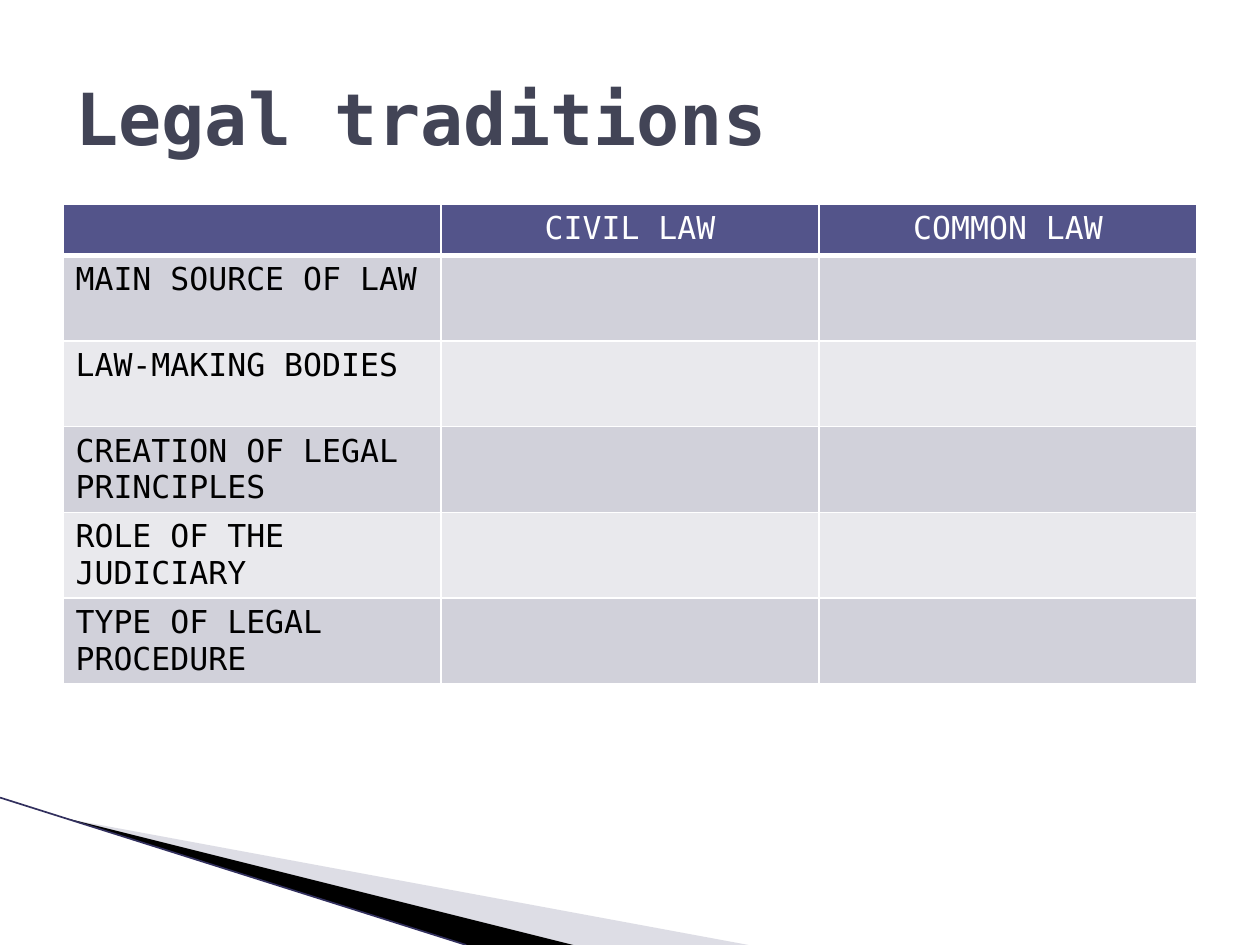
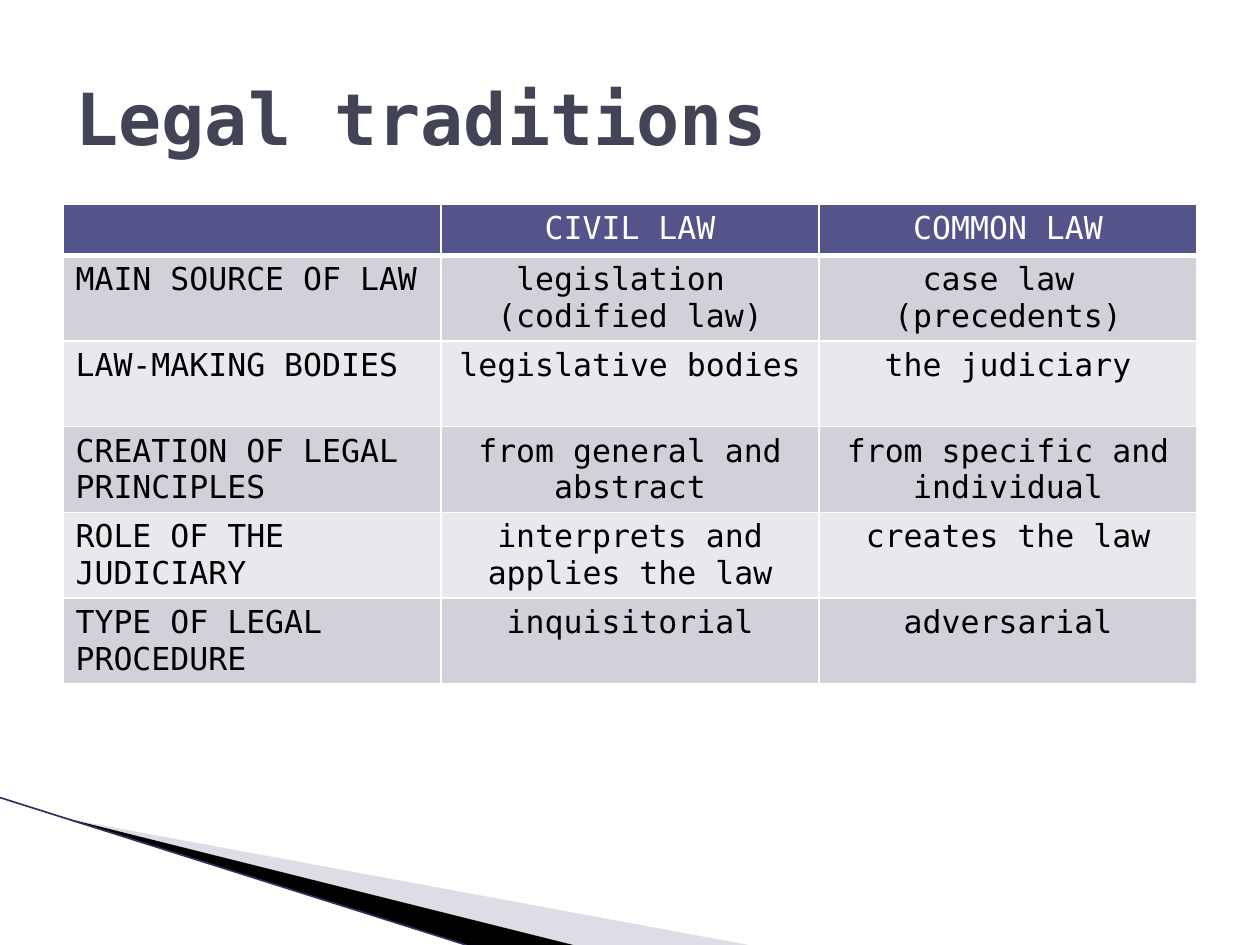
from dataclasses import dataclass

from lxml import etree
from pptx import Presentation, util as u
from pptx.dml.color import RGBColor
from pptx.enum import shapes, text
from pptx.oxml import ns


@dataclass(frozen=True)
class Theme:
    font: str = "DejaVu Sans Mono"
    title_size: float = 41
    table_size: float = 18
    title: str = "424456"
    header: str = "53548A"
    bands: tuple = ("D1D1DA", "E9E9ED")
    white: str = "FFFFFF"
    black: str = "000000"
    pale_wedge: str = "AAAABF"
    edge: str = "32305E"


THEME = Theme()
WIDTH, HEIGHT = u.Inches(10), u.Inches(7.5)
MARGIN = 0.05  # share of the slide width
COLUMNS = 3
HEADER_ROW, BODY_ROW = u.Inches(0.4), u.Inches(0.68)

TITLE = "Legal traditions"
HEADINGS = ["", "CIVIL LAW", "COMMON LAW"]
TOPICS = [
    "MAIN SOURCE OF LAW",
    "LAW-MAKING BODIES",
    "CREATION OF LEGAL PRINCIPLES",
    "ROLE OF THE JUDICIARY",
    "TYPE OF LEGAL PROCEDURE",
]
# The trailing spaces belong to the wording; a line break starts a paragraph
ANSWERS = [
    ("legislation \n(codified law)", "case law \n(precedents)"),
    ("legislative bodies", "the judiciary"),
    ("from general and abstract", "from specific and individual"),
    ("interprets and applies the law", "creates the law"),
    ("inquisitorial", "adversarial"),
]
NO_ANSWERS = [("", "")] * len(TOPICS)


def across(share):
    return u.Emu(round(WIDTH * share))


def down(share):
    return u.Emu(round(HEIGHT * share))


def set_fill(target, color):
    target.fill.solid()
    target.fill.fore_color.rgb = RGBColor.from_string(color)


def add_run(paragraph, words, size, color, bold=False):
    run = paragraph.add_run()
    run.text = words
    run.font.name = THEME.font
    run.font.size = u.Pt(size)
    run.font.bold = bold
    run.font.color.rgb = RGBColor.from_string(color)


# Decoration at the foot of the slide
def add_wedge(slide, points, color, opacity=None):
    corners = [(across(x), down(y)) for x, y in points]
    builder = slide.shapes.build_freeform(*corners[0])
    builder.add_line_segments(corners[1:], close=True)
    wedge = builder.convert_to_shape()
    wedge.shadow.inherit = False
    wedge.line.fill.background()
    set_fill(wedge, color)
    if opacity is not None:
        color_element = wedge.fill._xPr.find(".//" + ns.qn("a:srgbClr"))
        alpha = etree.SubElement(color_element, ns.qn("a:alpha"))
        alpha.set("val", str(opacity * 1000))


def add_corner(slide):
    add_wedge(slide, [(0.055, 0.867), (0.594, 1), (0.455, 1)],
              THEME.pale_wedge, opacity=40)
    add_wedge(slide, [(0.053, 0.866), (0.455, 1), (0.37, 1)], THEME.black)
    edge = slide.shapes.add_connector(
        shapes.MSO_CONNECTOR.STRAIGHT, 0, down(0.844), across(0.37), down(1))
    edge.line.color.rgb = RGBColor.from_string(THEME.edge)
    edge.line.width = u.Pt(0.95)
    etree.SubElement(edge._element.spPr, ns.qn("a:effectLst"))


def add_title(slide, words):
    box = slide.shapes.add_textbox(
        across(MARGIN), down(0.04), across(1 - 2 * MARGIN), down(1 / 6))
    frame = box.text_frame
    frame.word_wrap = True
    frame.vertical_anchor = text.MSO_ANCHOR.MIDDLE
    add_run(frame.paragraphs[0], words, THEME.title_size, THEME.title, bold=True)


# Comparison table
def set_borders(cell, bottom_points):
    properties = cell._tc.get_or_add_tcPr()
    for index, side in enumerate(("lnL", "lnR", "lnT", "lnB")):
        points = bottom_points if side == "lnB" else 1
        line = etree.Element(ns.qn("a:" + side), w=str(u.Pt(points)))
        solid = etree.SubElement(line, ns.qn("a:solidFill"))
        etree.SubElement(solid, ns.qn("a:srgbClr"), val=THEME.white)
        properties.insert(index, line)


def fill_cell(cell, words, fill, color, centred, bottom_points):
    set_fill(cell, fill)
    set_borders(cell, bottom_points)
    frame = cell.text_frame
    for index, line in enumerate(words.split("\n")):
        paragraph = frame.add_paragraph() if index else frame.paragraphs[0]
        if centred:
            paragraph.alignment = text.PP_ALIGN.CENTER
        if line:
            add_run(paragraph, line, THEME.table_size, color)
        else:
            paragraph.font.size = u.Pt(THEME.table_size)


def add_comparison(slide, answers):
    rows = [HEADINGS] + [[topic, *pair] for topic, pair in zip(TOPICS, answers)]
    table = slide.shapes.add_table(
        len(rows), COLUMNS, across(MARGIN), down(0.216), across(1 - 2 * MARGIN),
        HEADER_ROW + BODY_ROW * len(TOPICS)).table
    for row_index, row in enumerate(rows):
        is_header = row_index == 0
        table.rows[row_index].height = HEADER_ROW if is_header else BODY_ROW
        fill = THEME.header if is_header else THEME.bands[(row_index - 1) % 2]
        color = THEME.white if is_header else THEME.black
        for column, words in enumerate(row):
            fill_cell(table.cell(row_index, column), words, fill, color,
                      centred=column > 0, bottom_points=3 if is_header else 1)


def main():
    presentation = Presentation()
    presentation.slide_width, presentation.slide_height = WIDTH, HEIGHT
    blank = presentation.slide_layouts[6]
    # The empty table first, then the completed one
    for answers in (NO_ANSWERS, ANSWERS):
        slide = presentation.slides.add_slide(blank)
        add_corner(slide)
        add_comparison(slide, answers)
        add_title(slide, TITLE)
    presentation.save("out.pptx")


if __name__ == "__main__":
    main()
